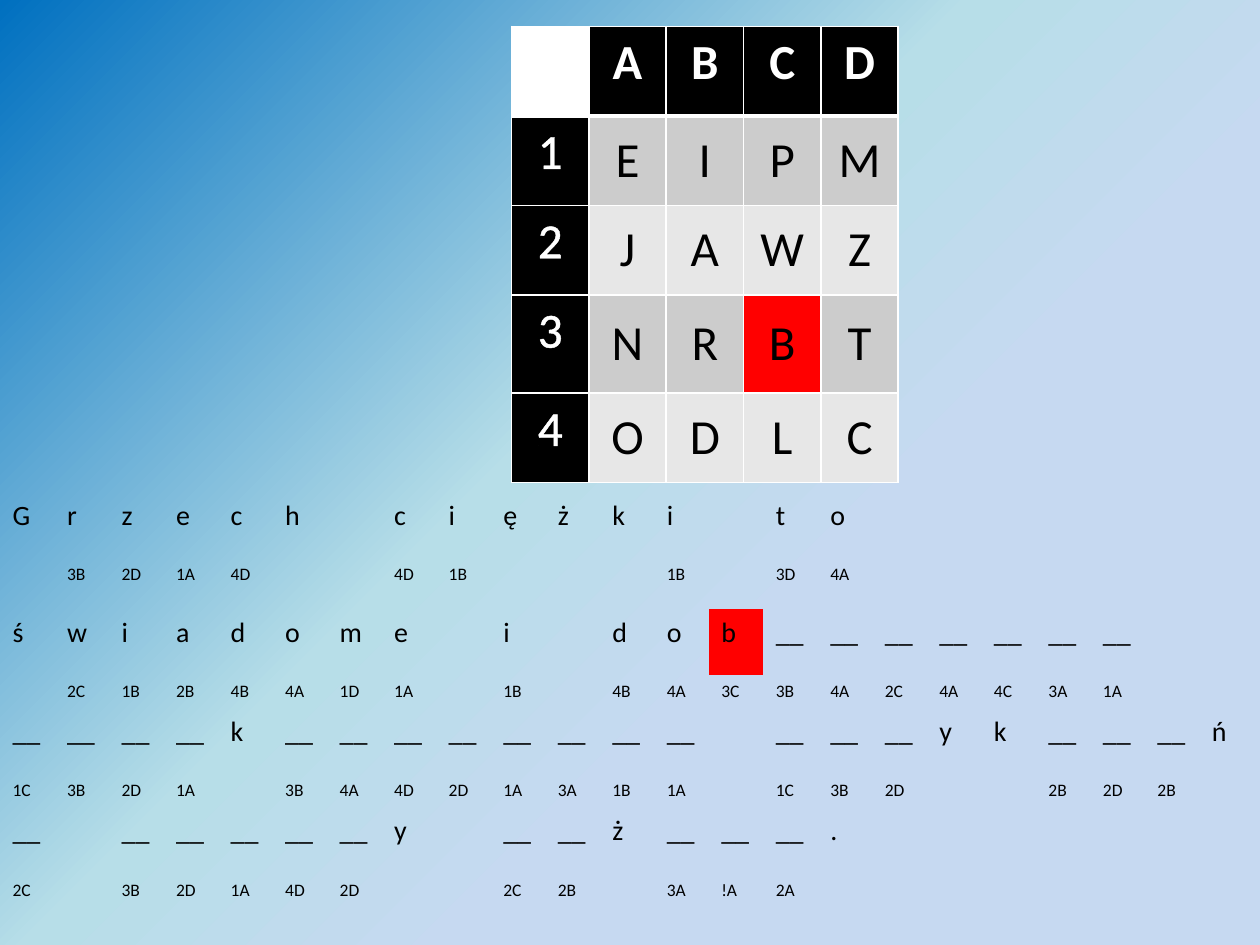
from lxml import etree
from pptx import Presentation
from pptx.dml.color import RGBColor
from pptx.enum.text import MSO_ANCHOR, PP_ALIGN
from pptx.oxml.ns import qn
from pptx.util import Inches, Pt

CENTER, LEFT = PP_ALIGN.CENTER, PP_ALIGN.LEFT
TOP, MIDDLE = MSO_ANCHOR.TOP, MSO_ANCHOR.MIDDLE

WHITE = RGBColor(0xFF, 0xFF, 0xFF)
BLACK = RGBColor(0x00, 0x00, 0x00)
RED = RGBColor(0xFF, 0x00, 0x00)
DARK_BAND = RGBColor(0xCC, 0xCC, 0xCC)
LIGHT_BAND = RGBColor(0xE7, 0xE7, 0xE7)
SKY = RGBColor(0x00, 0x70, 0xC0)
MIST = RGBColor(0xB7, 0xDE, 0xE8)
HAZE = RGBColor(0xC6, 0xD9, 0xF1)
BACKGROUND_STOPS = [(0, SKY), (44, MIST), (64, HAZE), (100, HAZE)]

FONT = "Calibri"
PLAIN_TABLE_STYLE = "{2D5ABB26-0587-4C30-8999-92F81FD0307C}"

# Key grid: column letters, row numbers and the letter at each crossing
KEY_ROWS = [" ABCD", "1EIPM", "2JAWZ", "3NRBT", "4ODLC"]
KEY_HEIGHTS = [0.71, 0.71, 0.71, 0.78, 0.71]
KEY_HIT = (3, 3)

# Sentence to solve: "_" is a letter to find, "-" a place without a code
SENTENCE = [
    ("Grzech ciężki to", "- 3B 2D 1A 4D - - 4D 1B - - - 1B - 3D 4A"),
    ("świadome i dob_______",
     "- 2C 1B 2B 4B 4A 1D 1A - 1B - 4B 4A 3C 3B 4A 2C 4A 4C 3A 1A"),
    ("____k________ ___yk___ń",
     "1C 3B 2D 1A - 3B 4A 4D 2D 1A 3A 1B 1A - 1C 3B 2D - - 2B 2D 2B"),
    ("_ _____y __ż___.", "2C - 3B 2D 1A 4D 2D - - 2C 2B - 3A !A 2A"),
]
SENTENCE_COLUMNS = 23
SENTENCE_HIT = (2, 13)
LETTER_HEIGHT, CODE_HEIGHT = 0.52, 0.24


def add_solid(parent, color):
    fill = etree.SubElement(parent, qn("a:solidFill"))
    etree.SubElement(fill, qn("a:srgbClr"), val=str(color))


def paint_background(slide):
    fill = slide.background.fill
    fill.gradient()
    fill.gradient_angle = 315
    stops = next(slide.element.iter(qn("a:gsLst")))
    for stop in list(stops):
        stops.remove(stop)
    for percent, color in BACKGROUND_STOPS:
        stop = etree.SubElement(stops, qn("a:gs"), pos=str(percent * 1000))
        etree.SubElement(stop, qn("a:srgbClr"), val=str(color))


def add_plain_table(slide, left, top, width, columns, heights):
    frame = slide.shapes.add_table(
        len(heights), columns, Inches(left), Inches(top),
        Inches(width), Inches(sum(heights)))
    table = frame.table
    table.horz_banding = False
    next(frame.element.iter(qn("a:tableStyleId"))).text = PLAIN_TABLE_STYLE
    for column in table.columns:
        column.width = Inches(width / columns)
    for row, height in zip(table.rows, heights):
        row.height = Inches(height)
    return table


def fill_cell(cell, color):
    if color is None:
        cell.fill.background()
    else:
        cell.fill.solid()
        cell.fill.fore_color.rgb = color


def write_cell(cell, text, size, color=BLACK, bold=False, align=LEFT,
               anchor=TOP):
    cell.vertical_anchor = anchor
    paragraph = cell.text_frame.paragraphs[0]
    paragraph.alignment = align
    if not text:
        # An empty cell keeps its row as low as this text size
        etree.SubElement(paragraph._p, qn("a:endParaRPr"), sz=str(size * 100))
        return None
    run = paragraph.add_run()
    run.text = text
    for name, value in {"name": FONT, "size": Pt(size), "bold": bold}.items():
        setattr(run.font, name, value)
    run.font.color.rgb = color
    return run


def outline_text(run, color, points):
    line = etree.Element(qn("a:ln"), w=str(Pt(points)))
    add_solid(line, color)
    run.font._element.insert(0, line)


def set_borders(cell, widths):
    properties = cell._tc.get_or_add_tcPr()
    for place, (side, points) in enumerate(widths.items()):
        line = etree.Element(qn(f"a:ln{side}"), w=str(Pt(points)))
        add_solid(line, WHITE)
        properties.insert(place, line)


def add_key_grid(slide):
    table = add_plain_table(slide, 4.06, 0.21, 3.07, len(KEY_ROWS[0]),
                            KEY_HEIGHTS)
    for r, letters in enumerate(KEY_ROWS):
        band = DARK_BAND if r % 2 else LIGHT_BAND
        for c, letter in enumerate(letters.replace(" ", "\0")):
            cell = table.cell(r, c)
            heading = r == 0 or c == 0
            if r == 0 and c == 0:
                fill_cell(cell, WHITE)
                write_cell(cell, "", 28, align=CENTER)
            elif heading:
                fill_cell(cell, BLACK)
                run = write_cell(cell, letter, 28, WHITE, r == 0, CENTER)
                if c == 0:
                    outline_text(run, WHITE, 0.75)
            else:
                fill_cell(cell, RED if (r, c) == KEY_HIT else band)
                write_cell(cell, letter, 28, align=CENTER, anchor=MIDDLE)
            set_borders(cell, {"L": 1, "R": 1, "T": 3 if r == 1 else 1,
                               "B": 3 if r == 0 else 1})


def add_sentence(slide):
    table = add_plain_table(slide, 0, 3.91, 9.96, SENTENCE_COLUMNS,
                            [LETTER_HEIGHT, CODE_HEIGHT] * len(SENTENCE))
    rows = []
    for letters, codes in SENTENCE:
        rows.append([{"_": "__", " ": ""}.get(x, x) for x in letters])
        rows.append(["" if code == "-" else code for code in codes.split()])
    for r, texts in enumerate(rows):
        size = 10 if r % 2 else 16
        for c in range(SENTENCE_COLUMNS):
            cell = table.cell(r, c)
            text = texts[c] if c < len(texts) else ""
            # Empty places under the first line are taller
            write_cell(cell, text, 18 if r == 1 and not text else size)
            fill_cell(cell, RED if (r, c) == SENTENCE_HIT else None)


def main():
    deck = Presentation()
    deck.slide_width, deck.slide_height = Inches(10), Inches(7.5)
    slide = deck.slides.add_slide(deck.slide_layouts[6])
    paint_background(slide)
    add_key_grid(slide)
    add_sentence(slide)
    deck.save("out.pptx")


if __name__ == "__main__":
    main()
